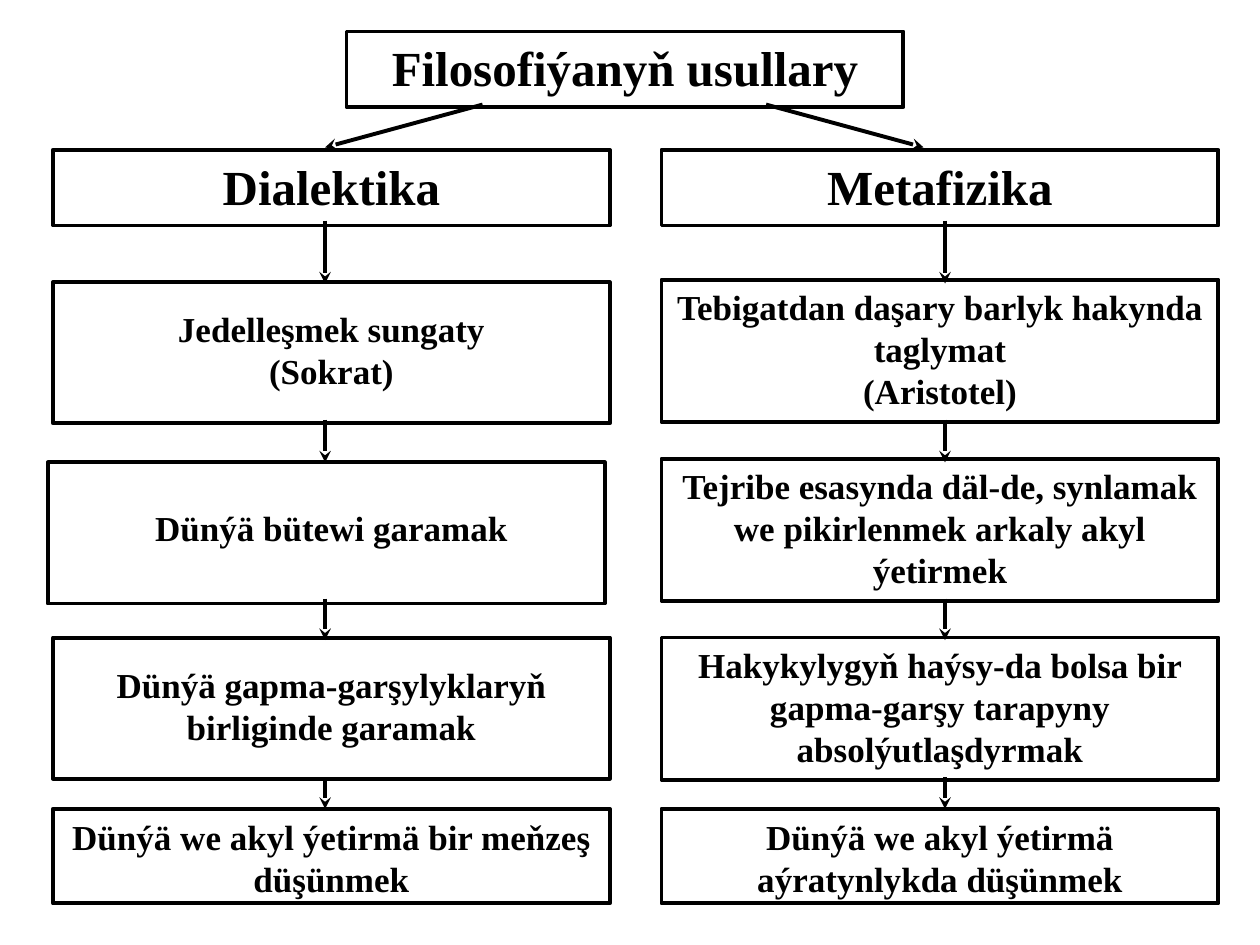
"""Build a slide that compares the two methods of philosophy as parallel flows."""
from typing import NamedTuple

from lxml import etree
from pptx import Presentation
from pptx.dml.color import RGBColor
from pptx.enum import shapes, text
from pptx.oxml import ns
from pptx.util import Inches, Pt

BLACK = RGBColor(0x00, 0x00, 0x00)
FONT = "Times New Roman"
LINE_WIDTH = Pt(2.25)
BOX_WIDTH = 4.42
LEFT, RIGHT = 0.42, 5.25
LEFT_FLOW, RIGHT_FLOW = 2.58, 7.5
HEADING_SIZE = 28


class Box(NamedTuple):
    left: float
    top: float
    height: float
    words: str = ""
    size: int = 20
    framed: bool = True


class Arrow(NamedTuple):
    x1: float
    y1: float
    x2: float
    y2: float


TITLE = Box(2.75, 0.25, 0.6, "Filosofiýanyň usullary", HEADING_SIZE)

BOXES = [
    Box(LEFT, 1.19, 0.6, "Dialektika", HEADING_SIZE),
    Box(LEFT, 2.39, 0.77, "Jedelleşmek sungaty\v(Sokrat)", framed=False),
    Box(LEFT, 3.97, 0.43, "Dünýä bütewi garamak", framed=False),
    Box(LEFT, 5.22, 0.78, "Dünýä gapma-garşylyklaryň birliginde garamak", framed=False),
    Box(LEFT, 6.42, 0.75, "Dünýä we akyl ýetirmä bir meňzeş düşünmek"),
    Box(RIGHT, 1.19, 0.6, "Metafizika", HEADING_SIZE),
    Box(RIGHT, 2.22, 1.13, "Tebigatdan daşary barlyk hakynda taglymat\v(Aristotel)"),
    Box(RIGHT, 3.64, 1.13,
        "Tejribe esasynda däl-de, synlamak we pikirlenmek arkaly akyl ýetirmek"),
    Box(RIGHT, 5.06, 1.13,
        "Hakykylygyň haýsy-da bolsa bir gapma-garşy tarapyny absolýutlaşdyrmak"),
    Box(RIGHT, 6.42, 0.75, "Dünýä we akyl ýetirmä aýratynlykda düşünmek"),
    Box(0.38, 3.67, 1.12),
    Box(LEFT, 5.06, 1.12),
    Box(LEFT, 2.24, 1.12),
]

BRANCHES = [
    Arrow(3.83, 0.83, LEFT_FLOW, 1.17),
    Arrow(6.08, 0.83, RIGHT_FLOW - 0.17, 1.17),
]
STEPS = [(1.75, 2.25), (3.33, 3.67), (4.75, 5.08), (6.17, 6.42)]


def write(shape, words: str, *, size: int, bold: bool = True, color: RGBColor = BLACK) -> None:
    """Put centred, wrapped text in a shape."""
    frame = shape.text_frame
    frame.word_wrap = True
    frame.auto_size = text.MSO_AUTO_SIZE.NONE
    frame.vertical_anchor = text.MSO_ANCHOR.TOP
    paragraph = frame.paragraphs[0]
    paragraph.text = words
    paragraph.alignment = text.PP_ALIGN.CENTER
    paragraph.space_before = Pt(0)
    paragraph.font.name = FONT
    paragraph.font.size = Pt(size)
    paragraph.font.bold = bold
    paragraph.font.color.rgb = color


def outline(shape) -> None:
    """Give a shape or connector the common black line."""
    shape.line.color.rgb = BLACK
    shape.line.width = LINE_WIDTH


def bounds(box: Box) -> tuple:
    """Return the position and size of a box as lengths."""
    return tuple(Inches(n) for n in (box.left, box.top, BOX_WIDTH, box.height))


def draw_title(slide, box: Box) -> None:
    """Move and format the title placeholder."""
    title = slide.shapes.title
    title.left, title.top, title.width, title.height = bounds(box)
    outline(title)
    write(title, box.words, size=box.size)


def draw_box(slide, box: Box) -> None:
    """Draw a framed rectangle or a plain text box."""
    if box.framed:
        shape = slide.shapes.add_shape(shapes.MSO_SHAPE.RECTANGLE, *bounds(box))
        shape.shadow.inherit = False
        shape.fill.background()
        outline(shape)
    else:
        shape = slide.shapes.add_textbox(*bounds(box))
    if box.words:
        write(shape, box.words, size=box.size)


def draw_arrow(slide, arrow: Arrow) -> None:
    """Draw a straight line with a stealth arrowhead at its end."""
    connector = slide.shapes.add_connector(
        shapes.MSO_CONNECTOR.STRAIGHT, *(Inches(n) for n in arrow))
    outline(connector)
    etree.SubElement(connector.line._get_or_add_ln(), ns.qn("a:tailEnd"), type="stealth")
    etree.SubElement(connector._element.spPr, ns.qn("a:effectLst"))


def main() -> None:
    """Assemble and save the slide."""
    deck = Presentation()
    deck.slide_width, deck.slide_height = Inches(10), Inches(7.5)
    slide = deck.slides.add_slide(deck.slide_layouts[5])
    draw_title(slide, TITLE)
    for box in BOXES:
        draw_box(slide, box)
    flows = [Arrow(x, start, x, end) for x in (LEFT_FLOW, RIGHT_FLOW) for start, end in STEPS]
    for arrow in BRANCHES + flows:
        draw_arrow(slide, arrow)
    deck.save("out.pptx")


if __name__ == "__main__":
    main()
